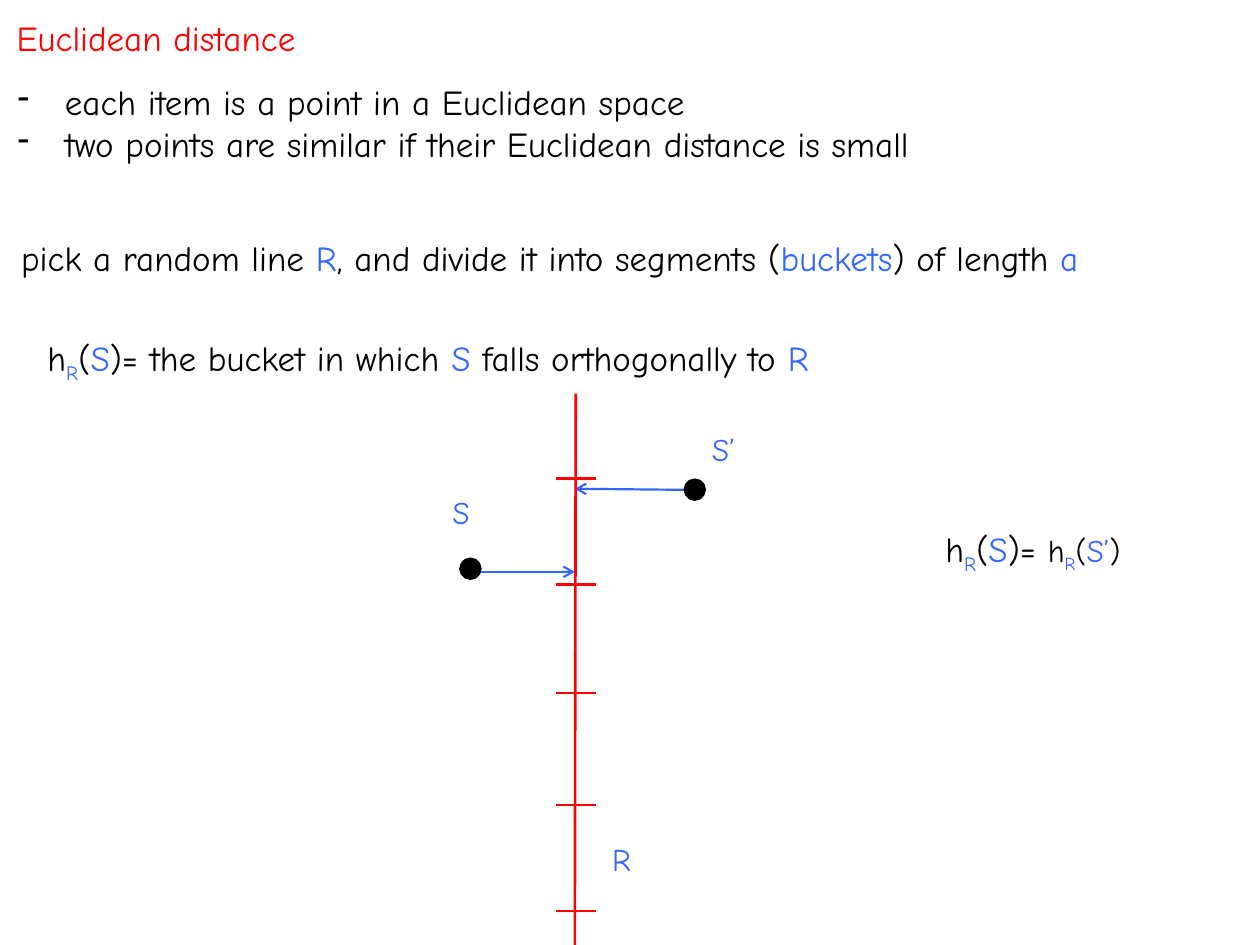
from lxml import etree
from pptx import Presentation
from pptx.dml.color import RGBColor
from pptx.enum import shapes, text
from pptx.oxml import ns
from pptx.util import Pt

RED = RGBColor(0xFF, 0, 0)
BLUE = RGBColor(0x33, 0x66, 0xFF)
BLACK = RGBColor(0, 0, 0)
FONT = "Comic Neue"
LEFT, MID = text.PP_ALIGN.LEFT, text.PP_ALIGN.CENTER


def style(run, color, size=20, sub=False):
    """Format one run, lowered when it is a subscript."""
    run.font.name, run.font.size = FONT, Pt(size)
    run.font.color.rgb = color
    if sub:
        run.font._element.set("baseline", "-25000")


def fill_line(par, parts, size=20, align=LEFT):
    """Write (text, color) parts as runs of one paragraph."""
    par.alignment = align
    for words, color, *rest in parts:
        run = par.add_run()
        run.text = words
        style(run, color, *(rest or [size]))


def add_text(slide, box, lines, size=20, align=LEFT):
    """Place a text box with one paragraph for each line."""
    frame = slide.shapes.add_textbox(*map(Pt, box)).text_frame
    frame.word_wrap = True
    for i, parts in enumerate(lines):
        par = frame.add_paragraph() if i else frame.paragraphs[0]
        fill_line(par, parts, size, align)
    return frame


def hash_of(point, size=20):
    """Return the parts of the hash of a point."""
    return [("h", BLACK, size), ("R", BLUE, size, True), ("(", BLACK, size),
            (point, BLUE, size)]


def add_line(slide, ends, color, width, arrow=False):
    """Draw a straight line between two points."""
    line = slide.shapes.add_connector(shapes.MSO_CONNECTOR.STRAIGHT,
                                      *map(Pt, ends))
    line.line.color.rgb, line.line.width = color, Pt(width)
    if arrow:
        tail = etree.SubElement(line.line._get_or_add_ln(), ns.qn("a:tailEnd"))
        tail.set("type", "arrow")
    etree.SubElement(line._element.spPr, ns.qn("a:effectLst"))


def add_title(slide, box):
    """Format the title placeholder inside the box."""
    title = slide.shapes.title
    title.left, title.top, title.width, title.height = map(Pt, box)
    frame = title.text_frame
    frame.text = "Euclidean distance"
    frame.auto_size = text.MSO_AUTO_SIZE.NONE
    frame.vertical_anchor = text.MSO_ANCHOR.TOP
    par = frame.paragraphs[0]
    par.alignment = LEFT
    style(par.runs[0], RED)


def add_list(slide, box):
    """Place the dashed list."""
    items = ("each item is a point in a Euclidean space",
             "two points are similar if their Euclidean distance is small")
    frame = add_text(slide, box, [[(item, BLACK)] for item in items])
    for par in frame.paragraphs:
        props = par._p.get_or_add_pPr()
        props.set("marL", str(Pt(27)))
        props.set("indent", str(Pt(-27)))
        etree.SubElement(props, ns.qn("a:buChar")).set("char", "-")


def add_rules(slide, box):
    """Place the bucket rule and the hash definition."""
    x, y, w, h = box
    add_text(slide, (x, y, w, 31.5), [[
        ("pick a random line ", BLACK), ("R", BLUE),
        (", and divide it into segments (", BLACK), ("buckets", BLUE),
        (") of length ", BLACK), ("a", BLUE)]])
    add_text(slide, (x + 15, y + h - 31.5, 544, 31.5), [hash_of("S") + [
        (")= the bucket in which ", BLACK), ("S ", BLUE),
        ("falls orthogonally to ", BLACK), ("R", BLUE)]])


def add_match(slide, box):
    """Place the equality of the two hashes."""
    parts = hash_of("S") + [(")= ", BLACK)] + hash_of("S’", 18)
    add_text(slide, box, [parts + [(")", BLACK, 18)]], align=MID)


def add_dot(slide, x, y):
    """Draw a point centred at x, y."""
    dot = slide.shapes.add_shape(shapes.MSO_SHAPE.OVAL, Pt(x - 5.4),
                                 Pt(y - 5.4), Pt(10.8), Pt(10.8))
    dot.shadow.inherit = False
    dot.fill.solid()
    dot.fill.fore_color.rgb = dot.line.color.rgb = BLACK
    dot.line.width = Pt(2)


def add_figure(slide, box):
    """Draw the divided line R with both points projected on it."""
    x, y, w, h = box
    axis = x + 84.5
    add_line(slide, (x + 153.5, y + 55, axis, y + 54.3), BLUE, 1.25, True)
    add_line(slide, (x + 29, y + 101.8, axis, y + 101.8), BLUE, 1.25, True)
    for name, dx, dy in (("S", 0, 53), ("S’", 150, 17), ("R", 91.7, 251.7)):
        add_text(slide, (x + dx, y + dy, 39, 29), [[(name, BLUE)]], 18, MID)
    for dx, dy in ((24.8, 100), (153, 54.8)):
        add_dot(slide, x + dx, y + dy)
    add_line(slide, (axis, y + h, axis + 0.5, y), RED, 1.5)
    for dy in (48.6, 109.1, 171, 235.1, 295.6):
        add_line(slide, (axis - 11, y + dy, axis + 12, y + dy), RED, 1.5)


def main():
    """Build and save the slide."""
    deck = Presentation()
    deck.slide_width, deck.slide_height = Pt(720), Pt(540)
    slide = deck.slides.add_slide(deck.slide_layouts[5])
    add_title(slide, (2.3, 6, 698, 31.5))
    add_list(slide, (3, 42.5, 717, 55.5))
    add_rules(slide, (5, 131.8, 695.5, 88.3))
    add_match(slide, (526.3, 298, 128, 31.5))
    add_figure(slide, (244, 225, 189, 315))
    deck.save("out.pptx")


if __name__ == "__main__":
    main()
